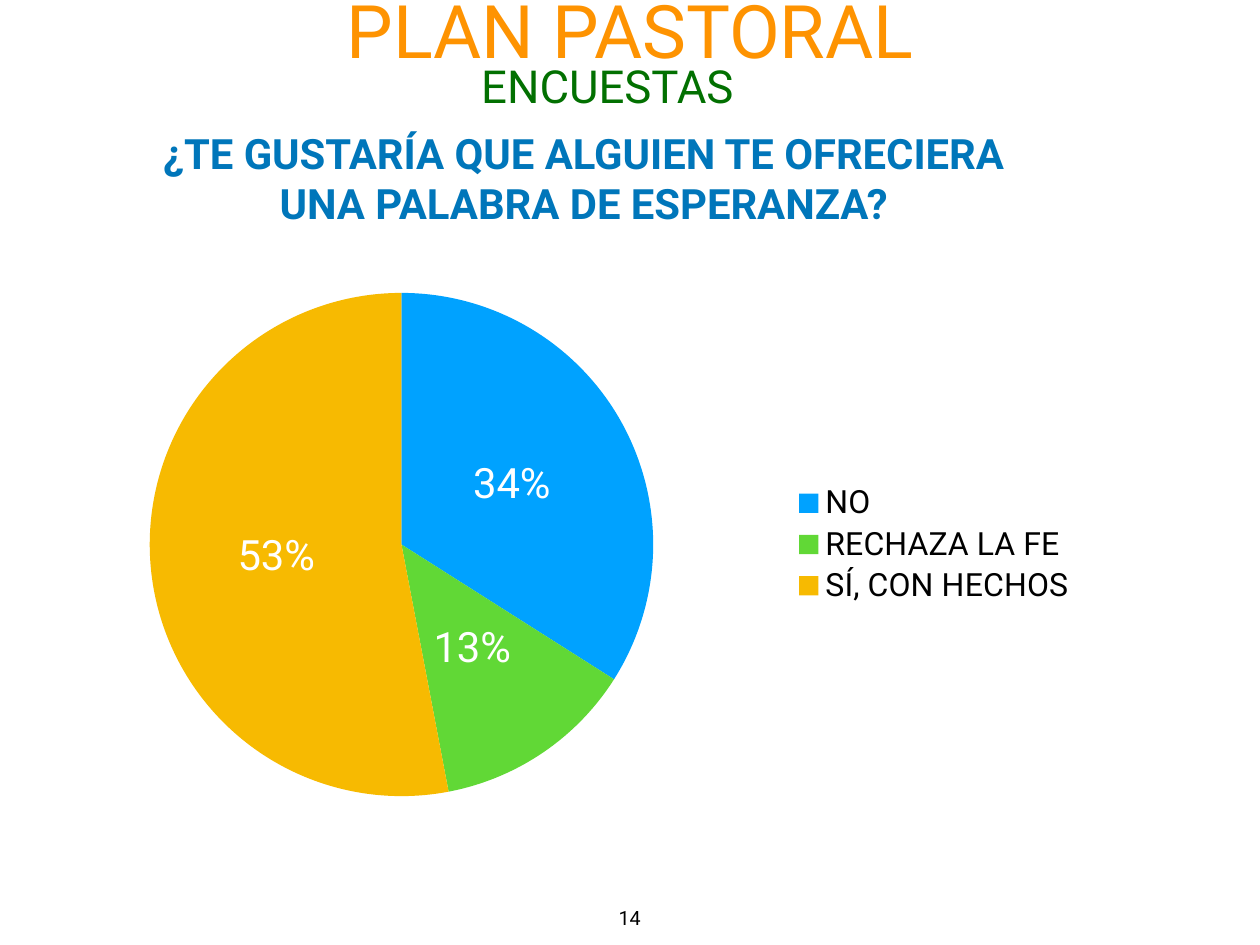
from pptx import Presentation
from pptx.chart.data import CategoryChartData
from pptx.dml.color import RGBColor
from pptx.enum.chart import XL_CHART_TYPE as ChartType
from pptx.enum.chart import XL_LABEL_POSITION as LabelPosition
from pptx.enum.chart import XL_LEGEND_POSITION as LegendPosition
from pptx.enum.text import MSO_ANCHOR as Anchor
from pptx.enum.text import MSO_AUTO_SIZE as AutoSize
from pptx.enum.text import PP_ALIGN as Align
from pptx.oxml import parse_xml
from pptx.oxml.ns import nsdecls
from pptx.util import Inches, Pt

FONT = "Roboto"
COLORS = {
    "white": "FFFFFF",
    "black": "000000",
    "title": "FE9301",
    "subtitle": "027001",
    "question": "0076BA",
    "blue": "00A2FF",
    "green": "61D836",
    "yellow": "F7BA01",
}
# Answer, percentage, slice colour
ANSWERS = [
    ("NO", 34, "blue"),
    ("RECHAZA LA FE", 13, "green"),
    ("SÍ, CON HECHOS", 53, "yellow"),
]


def color(name):
    return RGBColor.from_string(COLORS[name])


def style_font(font, size, color_name, bold=False):
    font.name = FONT
    font.size = Pt(size)
    font.bold = bold
    font.color.rgb = color(color_name)


def fill_text(shape, text, size, color_name, bold=False, anchor=Anchor.TOP):
    frame = shape.text_frame
    frame.text = text
    frame.word_wrap = True
    frame.auto_size = AutoSize.NONE
    frame.vertical_anchor = anchor
    frame.margin_left = frame.margin_right = Inches(0.06)
    frame.margin_top = frame.margin_bottom = Inches(0.06)
    for paragraph in frame.paragraphs:
        paragraph.alignment = Align.CENTER
        for run in paragraph.runs:
            style_font(run.font, size, color_name, bold)


def add_title(slide, text):
    title = slide.shapes.title
    title.left, title.top = Inches(1.39), Inches(-0.9)
    title.width, title.height = Inches(11.44), Inches(1.79)
    title.fill.solid()
    title.fill.fore_color.rgb = color("white")
    fill_text(title, text, 60, "title", anchor=Anchor.BOTTOM)


def add_text(slide, box, text, size, color_name, **options):
    shape = slide.shapes.add_textbox(*map(Inches, box))
    fill_text(shape, text, size, color_name, **options)


def manual_layout(x, y, width, height, target=""):
    return parse_xml(
        f'<c:layout {nsdecls("c")}><c:manualLayout>{target}'
        '<c:xMode val="edge"/><c:yMode val="edge"/>'
        f'<c:x val="{x}"/><c:y val="{y}"/>'
        f'<c:w val="{width}"/><c:h val="{height}"/>'
        "</c:manualLayout></c:layout>"
    )


def add_pie(slide, box):
    data = CategoryChartData()
    data.categories = [answer for answer, _, _ in ANSWERS]
    data.add_series("Series 1", [value for _, value, _ in ANSWERS])
    chart = slide.shapes.add_chart(
        ChartType.PIE, *map(Inches, box), data
    ).chart
    chart.has_title = False
    style_font(chart.font, 10, "black")

    # Slices
    plot = chart.plots[0]
    plot.vary_by_categories = True
    for index, (_, _, color_name) in enumerate(ANSWERS):
        fill = plot.series[0].points[index].format.fill
        fill.solid()
        fill.fore_color.rgb = color(color_name)

    # Percentage labels
    plot.has_data_labels = True
    labels = plot.data_labels
    labels.show_percentage = True
    labels.show_value = False
    labels.number_format = "#,##0%"
    labels.number_format_is_linked = False
    labels.position = LabelPosition.CENTER
    style_font(labels.font, 34, "white")

    # Legend
    chart.has_legend = True
    legend = chart.legend
    legend.position = LegendPosition.RIGHT
    legend.include_in_layout = True
    style_font(legend.font, 26, "black")

    # Pie on the left, legend on the right
    plot_area = chart.plots[0]._element.getparent()
    for layout in plot_area.findall("{*}layout"):
        plot_area.remove(layout)
    plot_area.insert(0, manual_layout(
        0.01, 0.01, 0.52, 0.99, '<c:layoutTarget val="inner"/>'))
    legend_element = plot_area.getnext()
    for layout in legend_element.findall("{*}layout"):
        legend_element.remove(layout)
    legend_element.insert(1, manual_layout(0.67, 0.38, 0.3, 0.25))


def main():
    presentation = Presentation()
    presentation.slide_width = Inches(14.22)
    presentation.slide_height = Inches(10.67)
    slide = presentation.slides.add_slide(presentation.slide_layouts[5])

    add_pie(slide, (1.58, 3.25, 10.93, 5.74))

    # Headings
    add_title(slide, "PLAN PASTORAL")
    add_text(slide, (4.53, 0.6, 4.65, 0.85), "ENCUESTAS", 37, "subtitle")
    add_text(
        slide, (1.69, 1.39, 9.8, 1.24),
        "¿TE GUSTARÍA QUE ALGUIEN TE OFRECIERA\nUNA PALABRA DE ESPERANZA?",
        34, "question", bold=True, anchor=Anchor.MIDDLE,
    )

    # Page number
    add_text(slide, (6.92, 10.17, 0.37, 0.35), "14", 16, "black")

    presentation.save("out.pptx")


if __name__ == "__main__":
    main()
